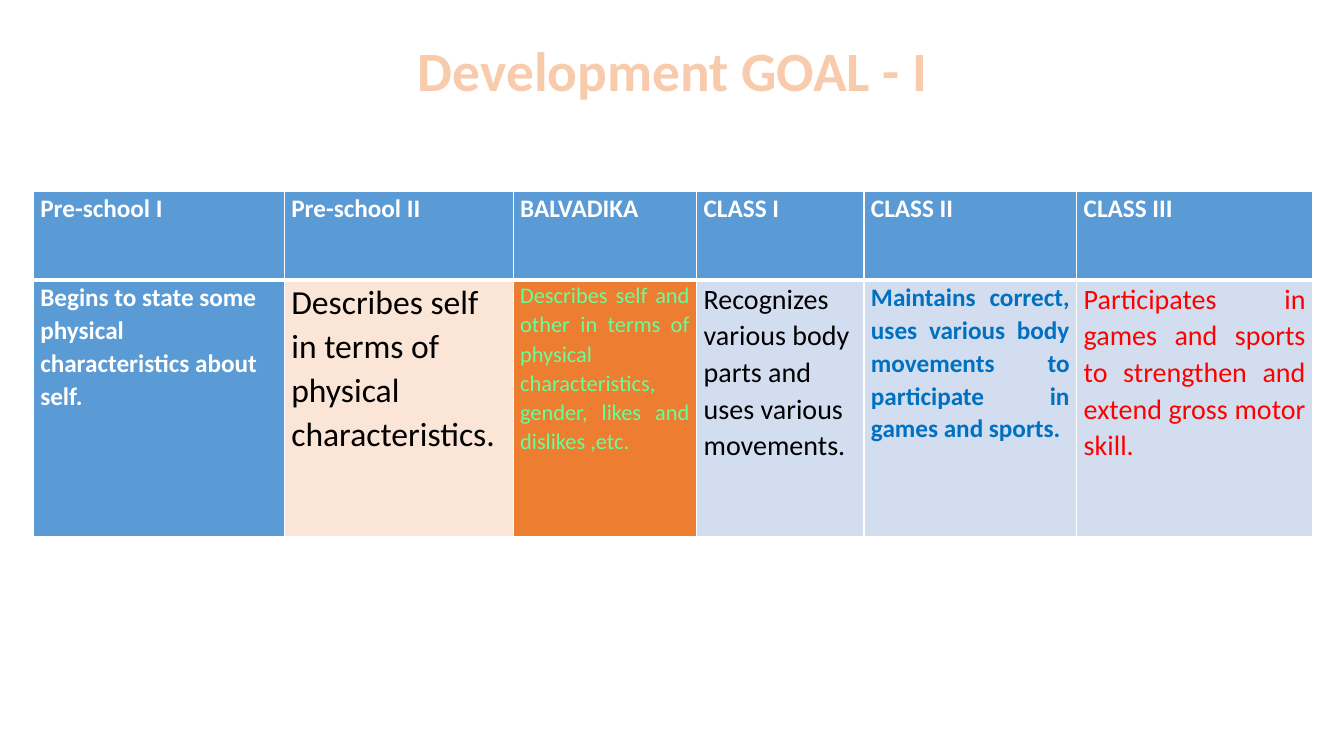
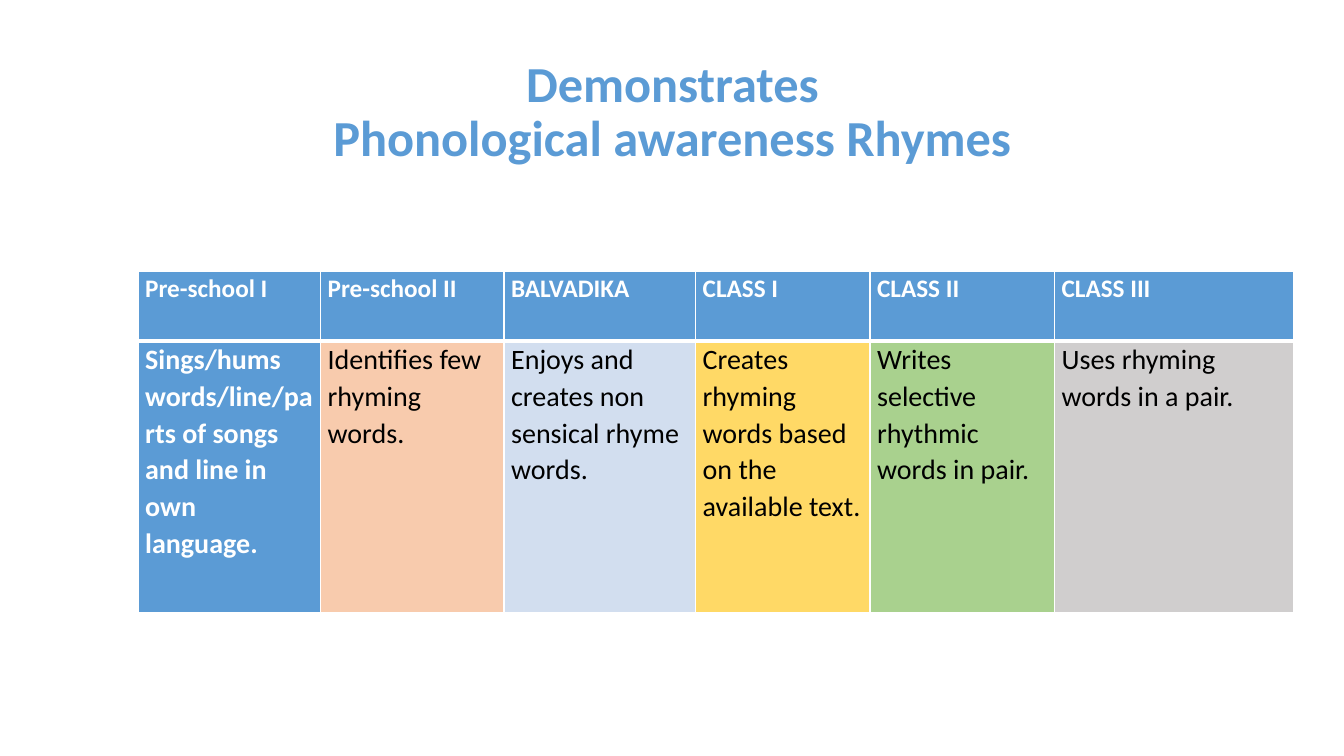
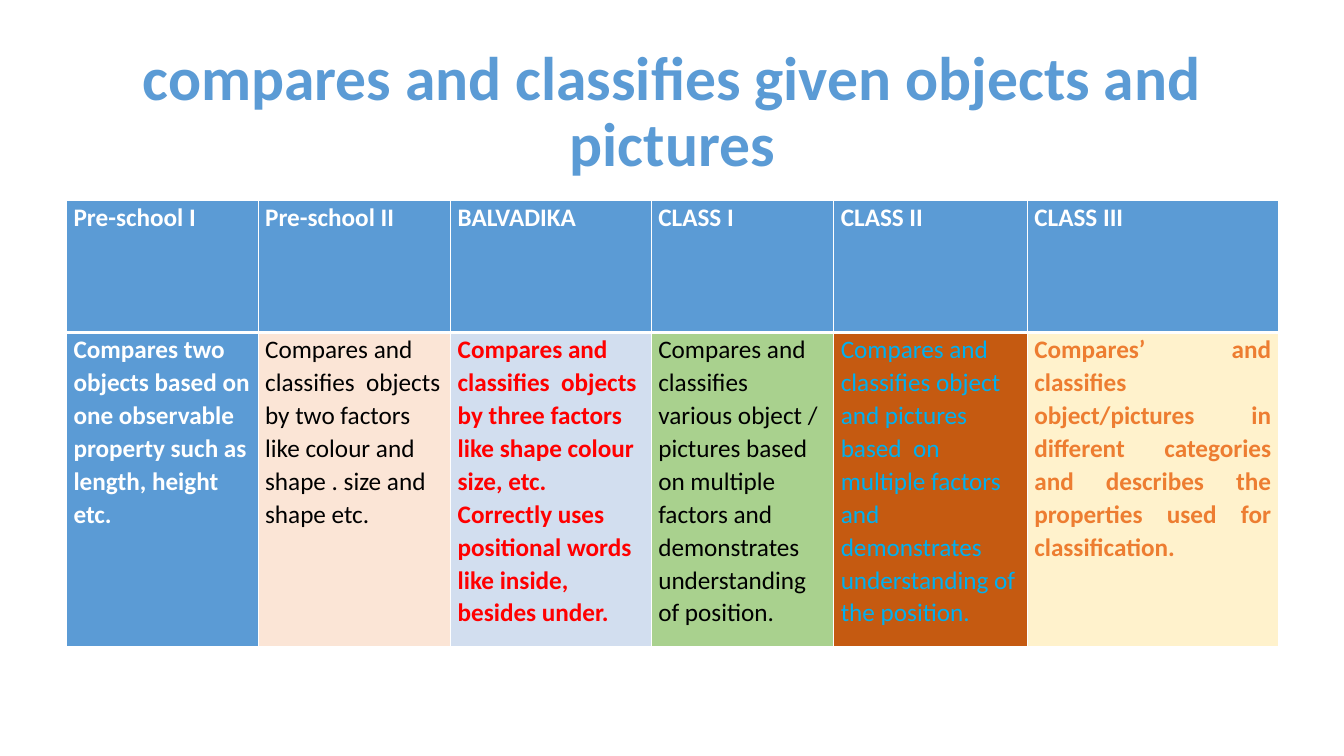
from dataclasses import dataclass

from lxml import etree
from pptx import Presentation
from pptx.dml.color import RGBColor
from pptx.enum.text import MSO_ANCHOR, MSO_AUTO_SIZE, PP_ALIGN
from pptx.oxml.ns import qn
from pptx.util import Inches, Pt

LEFT, CENTER, JUSTIFY = PP_ALIGN.LEFT, PP_ALIGN.CENTER, PP_ALIGN.JUSTIFY
MIDDLE, TOP = MSO_ANCHOR.MIDDLE, MSO_ANCHOR.TOP
FIXED_SIZE = MSO_AUTO_SIZE.NONE

FONT = "Calibri"
WHITE, BLACK, RED = "FFFFFF", "000000", "FF0000"
BLUE, PALE_BLUE, DEEP_BLUE, SKY = "5B9BD5", "D2DEEF", "0070C0", "00B0F0"
ORANGE, PEACH, CREAM, RUST = "ED7D31", "F8CBAD", "FBE5D6", "C55A11"
GREEN, MINT, GOLD, PALE_GOLD, GREY = "A9D18E", "66FF99", "FFD966", "FFF2CC", "D0CECE"

SLIDE_WIDTH, SLIDE_HEIGHT = 13.33, 7.5
TITLE_BOX = (0.92, 0.4, 11.5, 1.45)
TITLE_ONLY = 5
THIN, THICK = 1, 3
STAGES = (
    ("Pre-school I", LEFT), ("Pre-school II", LEFT), ("BALVADIKA", JUSTIFY),
    ("CLASS I", LEFT), ("CLASS II", JUSTIFY), ("CLASS III", JUSTIFY),
)


@dataclass
class Entry:
    text: str
    fill: str
    size: float = 18
    color: str = BLACK
    bold: bool = False
    align: int = LEFT


def rgb(code):
    return RGBColor.from_string(code)


def add_span(para, text, size, color, bold):
    span = para.add_run()
    span.text = text
    span.font.name = FONT
    span.font.size = Pt(size)
    span.font.bold = bold
    span.font.color.rgb = rgb(color)


def place(item, box):
    item.left, item.top, item.width, item.height = map(Inches, box)


def set_borders(cell, top, bottom):
    properties = cell._tc.get_or_add_tcPr()
    for side, width in (("L", THIN), ("R", THIN), ("T", top), ("B", bottom)):
        line = etree.SubElement(properties, qn(f"a:ln{side}"), w=str(Pt(width)))
        fill = etree.SubElement(line, qn("a:solidFill"))
        etree.SubElement(fill, qn("a:srgbClr"), val=WHITE)


def fill_cell(cell, entry, top, bottom):
    set_borders(cell, top, bottom)
    cell.fill.solid()
    cell.fill.fore_color.rgb = rgb(entry.fill)
    cell.margin_left = cell.margin_right = Inches(0.07)
    cell.margin_top = cell.margin_bottom = 0
    cell.vertical_anchor = TOP
    frame = cell.text_frame
    for index, text in enumerate(entry.text.split("\n")):
        para = frame.add_paragraph() if index else frame.paragraphs[0]
        para.alignment = entry.align
        para.line_spacing = 1.07
        add_span(para, text, entry.size, entry.color, entry.bold)


def add_title(page, text, size, color, box=None):
    title = page.shapes.title
    if box:
        place(title, box)
    frame = title.text_frame
    frame.word_wrap = True
    frame.auto_size = FIXED_SIZE
    frame.vertical_anchor = MIDDLE
    para = frame.paragraphs[0]
    para.alignment = CENTER
    para.line_spacing = 0.9
    for index, line in enumerate(text.split("\n")):
        if index:
            para.add_line_break()
        add_span(para, line, size, color, True)


def add_stage_table(page, left, top, columns, rows, entries):
    box = map(Inches, (left, top, sum(columns), sum(rows)))
    table = page.shapes.add_table(len(rows), len(columns), *box).table
    for column, width in zip(table.columns, columns):
        column.width = Inches(width)
    for row, height in zip(table.rows, rows):
        row.height = Inches(height)
    for index, (stage, align) in enumerate(STAGES):
        heading = Entry(stage, BLUE, color=WHITE, bold=True, align=align)
        fill_cell(table.cell(0, index), heading, THIN, THICK)
        fill_cell(table.cell(1, index), entries[index], THICK, THIN)


def add_page(deck, title, table):
    page = deck.slides.add_slide(deck.slide_layouts[TITLE_ONLY])
    add_title(page, **title)
    add_stage_table(page, **table)


PAGES = (
    (
        dict(text="Development GOAL - I", size=39.6, color=PEACH,
             box=(0.92, 0.4, 11.5, 0.65)),
        dict(left=0.33, top=1.9, columns=(2.49, 2.27, 1.82, 1.66, 2.11, 2.34),
             rows=(0.88, 2.54), entries=(
            Entry("Begins to state some physical characteristics about self.",
                  BLUE, color=WHITE, bold=True),
            Entry("Describes self in terms of physical characteristics.", CREAM, 24),
            Entry("Describes self and other in terms of physical characteristics, "
                  "gender, likes and dislikes ,etc.", ORANGE, 16, MINT, align=JUSTIFY),
            Entry("Recognizes various body parts and uses various movements.",
                  PALE_BLUE, 20),
            Entry("Maintains correct, uses various body movements to participate in "
                  "games and sports.", PALE_BLUE, 18, DEEP_BLUE, True, JUSTIFY),
            Entry("Participates in games and sports to strengthen and extend gross "
                  "motor skill.", PALE_BLUE, 20, RED, align=JUSTIFY),
        )),
    ),
    (
        dict(text="Demonstrates\nPhonological awareness Rhymes", size=36, color=BLUE),
        dict(left=1.37, top=2.69, columns=(1.81, 1.82, 1.9, 1.73, 1.83, 2.37),
             rows=(0.69, 2.7), entries=(
            Entry("Sings/hums words/line/parts of songs and line in own language.",
                  BLUE, 20, WHITE, True),
            Entry("Identifies few rhyming words.", PEACH, 20),
            Entry("Enjoys and creates non sensical rhyme words.", PALE_BLUE, 20),
            Entry("Creates rhyming words based on the available text.", GOLD, 20),
            Entry("Writes selective rhythmic words in pair.", GREEN, 20),
            Entry("Uses rhyming words in a pair.", GREY, 20),
        )),
    ),
    (
        dict(text="compares and classifies given objects and pictures", size=44,
             color=BLUE),
        dict(left=0.66, top=1.99, columns=(1.9, 1.91, 1.99, 1.81, 1.92, 2.49),
             rows=(1.31, 3.11), entries=(
            Entry("Compares two objects based on one observable property such as "
                  "length, height etc.", BLUE, color=WHITE, bold=True),
            Entry("Compares and classifies  objects by two factors like colour and "
                  "shape . size and shape etc.", CREAM),
            Entry("Compares and classifies  objects by three factors like shape "
                  "colour size, etc.\nCorrectly uses positional words like inside, "
                  "besides under.", PALE_BLUE, color=RED, bold=True),
            Entry("Compares and classifies  various object / pictures based on "
                  "multiple factors and demonstrates understanding of position.", GREEN),
            Entry("Compares and classifies object and pictures based  on multiple "
                  "factors and demonstrates understanding of the position.",
                  RUST, color=SKY),
            Entry("Compares’ and classifies object/pictures in different categories "
                  "and describes the properties used for classification.",
                  PALE_GOLD, 18, ORANGE, True, JUSTIFY),
        )),
    ),
)


def main():
    deck = Presentation()
    deck.slide_width, deck.slide_height = Inches(SLIDE_WIDTH), Inches(SLIDE_HEIGHT)
    place(deck.slide_layouts[TITLE_ONLY].placeholders[0], TITLE_BOX)
    for title, table in PAGES:
        add_page(deck, title, table)
    deck.save("out.pptx")


if __name__ == "__main__":
    main()
